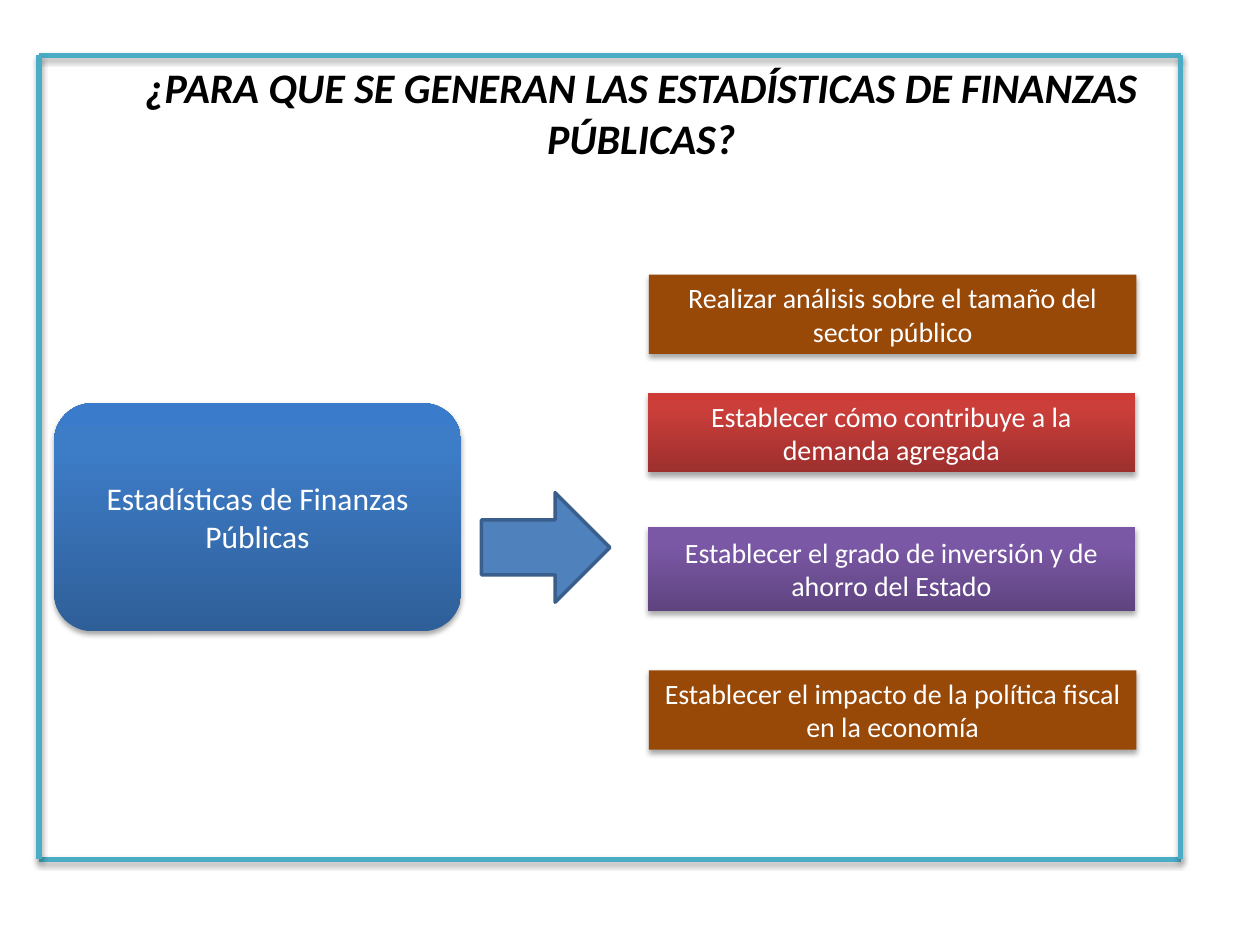
"""Build the slide on the purposes of public finance statistics."""
from copy import deepcopy

from lxml import etree
from pptx import Presentation
from pptx.dml.color import RGBColor
from pptx.enum.shapes import MSO_CONNECTOR, MSO_SHAPE
from pptx.enum.text import MSO_ANCHOR, MSO_AUTO_SIZE, PP_ALIGN
from pptx.oxml.ns import qn
from pptx.util import Inches, Pt

RECT = MSO_SHAPE.RECTANGLE
ROUNDED = MSO_SHAPE.ROUNDED_RECTANGLE
ARROW = MSO_SHAPE.RIGHT_ARROW
STRAIGHT = MSO_CONNECTOR.STRAIGHT
CENTER = PP_ALIGN.CENTER
MIDDLE = MSO_ANCHOR.MIDDLE
GROW = MSO_AUTO_SIZE.SHAPE_TO_FIT_TEXT

BROWN = ["984807"]
RED = ["9C2F2D", "CB3E3A", "CE3B37"]
PURPLE = ["5F4480", "7B58A6", "7C57A8"]
BLUE = ["2F5F99", "3D7CC7", "3A7CCB"]
STOPS = [0, 0.8, 1]

PURPOSES = [
    (5.15, 2.18, 0.63, BROWN, "Realizar análisis sobre el tamaño del sector público"),
    (5.14, 3.12, 0.63, RED, "Establecer cómo contribuye a la demanda agregada"),
    (5.14, 4.18, 0.67, PURPLE, "Establecer el grado de inversión y de ahorro del Estado"),
    (5.15, 5.32, 0.63, BROWN, "Establecer el impacto de la política fiscal en la economía"),
]


def rgb(value):
    return RGBColor.from_string(value)


class Deck:
    """Holds the font, the shadow and the current slide."""

    font = "Calibri"

    def __init__(self, s):
        self.s = s

    def shadow(self, sp):
        spPr = sp._element.spPr
        effects = spPr.find(qn("a:effectLst"))
        if effects is None:
            effects = etree.SubElement(spPr, qn("a:effectLst"))
        outer = etree.SubElement(effects, qn("a:outerShdw"), blurRad="40000",
                                 dist="23000", dir="5400000", rotWithShape="0")
        color = etree.SubElement(outer, qn("a:srgbClr"), val="000000")
        etree.SubElement(color, qn("a:alpha"), val="35000")

    def fill(self, sp, colors):
        if len(colors) == 1:
            sp.fill.solid()
            sp.fill.fore_color.rgb = rgb(colors[0])
            return
        sp.fill.gradient()
        sp.fill.gradient_angle = 90
        stops = sp._element.spPr.find(qn("a:gradFill")).find(qn("a:gsLst"))
        stops.append(deepcopy(stops[-1]))
        for stop, position, color in zip(sp.fill.gradient_stops, STOPS, colors):
            stop.position = position
            stop.color.rgb = rgb(color)

    def text(self, tf, text, size, color, bold=False, italic=False):
        tf.word_wrap = True
        p = tf.paragraphs[0]
        p.alignment = CENTER
        r = p.add_run()
        r.text = text
        r.font.name = self.font
        r.font.size = Pt(size)
        r.font.bold = bold
        r.font.italic = italic
        r.font.color.rgb = rgb(color)

    def shape(self, kind, x, y, w, h, colors):
        sp = self.s.shapes.add_shape(kind, Inches(x), Inches(y), Inches(w), Inches(h))
        sp.shadow.inherit = False
        self.fill(sp, colors)
        return sp

    def box(self, kind, x, y, w, h, colors, text, size):
        sp = self.shape(kind, x, y, w, h, colors)
        sp.line.fill.background()
        self.shadow(sp)
        sp.text_frame.vertical_anchor = MIDDLE
        self.text(sp.text_frame, text, size, "FFFFFF")

    def arrow(self, x, y, w, h, color, outline):
        sp = self.shape(ARROW, x, y, w, h, [color])
        sp.line.color.rgb = rgb(outline)
        sp.line.width = Pt(2)

    def title(self, x, y, w, h, text):
        sp = self.s.shapes.add_textbox(Inches(x), Inches(y), Inches(w), Inches(h))
        self.text(sp.text_frame, text, 24, "000000", bold=True, italic=True)
        sp.text_frame.auto_size = GROW

    def frame(self, left, top, right, bottom, color):
        group = self.s.shapes.add_group_shape()
        sides = [(left, top, right, top), (left, bottom, right, bottom),
                 (left, top, left, bottom), (right, top, right, bottom)]
        for side in sides:
            line = group.shapes.add_connector(STRAIGHT, *map(Inches, side))
            line.line.color.rgb = rgb(color)
            line.line.width = Pt(3)
            self.shadow(line)


def main():
    prs = Presentation()
    prs.slide_width, prs.slide_height = Inches(10), Inches(7.5)
    deck = Deck(prs.slides.add_slide(prs.slide_layouts[6]))
    deck.box(ROUNDED, 0.43, 3.2, 3.23, 1.81, BLUE, "Estadísticas de Finanzas Públicas", 18)
    for x, y, h, colors, text in PURPOSES:
        deck.box(RECT, x, y, 3.87, h, colors, text, 16)
    deck.title(0.61, 0.44, 8.96, 0.91,
               "¿PARA QUE SE GENERAN LAS ESTADÍSTICAS DE FINANZAS PÚBLICAS?")
    deck.arrow(3.82, 3.91, 1.02, 0.87, "4F81BD", "3A5F8C")
    deck.frame(0.31, 0.44, 9.37, 6.82, "4BACC6")
    prs.save("out.pptx")


if __name__ == "__main__":
    main()
